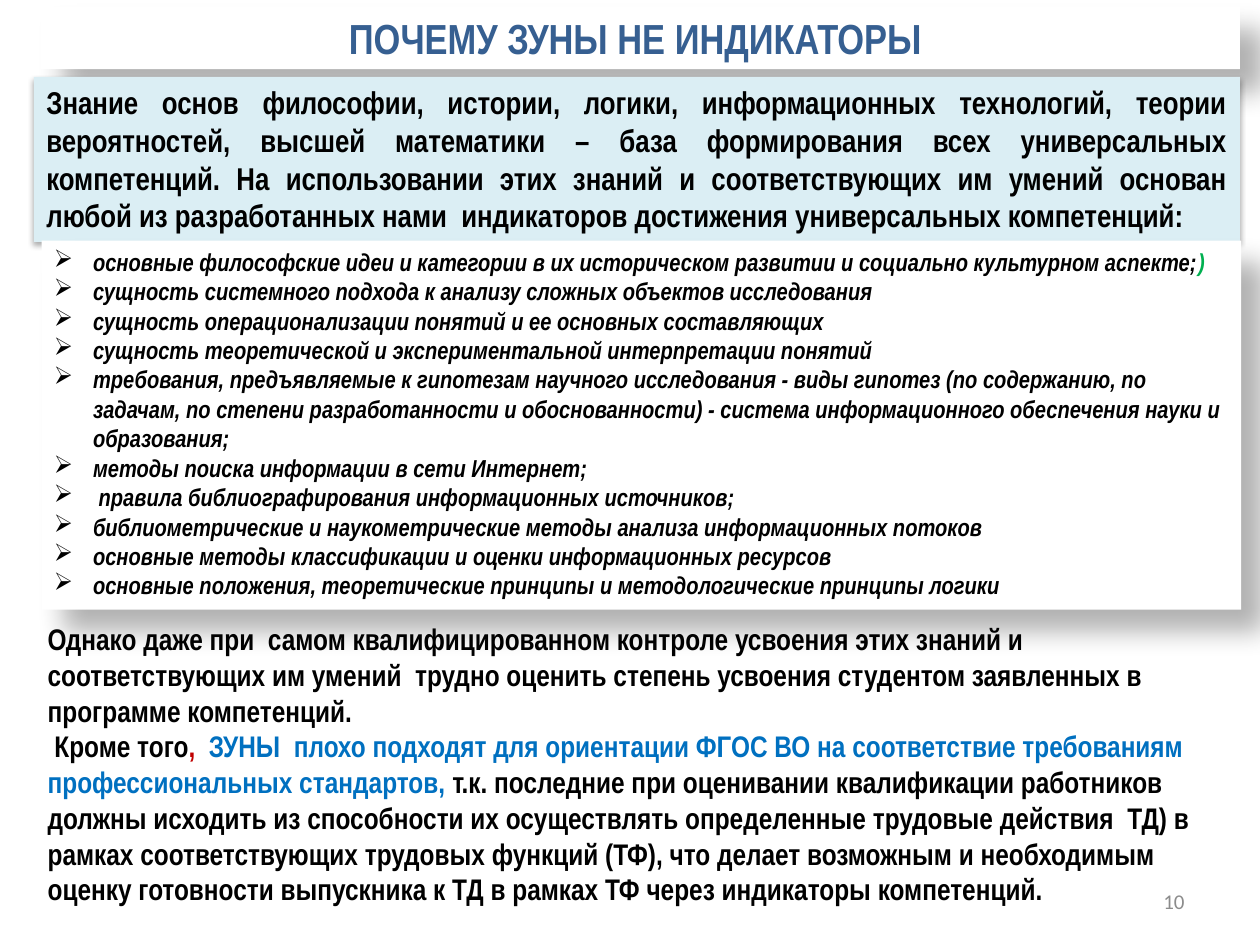
from lxml.etree import SubElement as Sub
from pptx import Presentation
from pptx.dml.color import RGBColor as RGB
from pptx.enum.shapes import MSO_SHAPE as Shape
from pptx.enum.text import MSO_ANCHOR as Anchor, MSO_AUTO_SIZE as Auto, PP_ALIGN as Align
from pptx.oxml.ns import qn
from pptx.util import Inches, Pt

COLORS = {
    "white": "FFFFFF", "black": "000000", "pale": "DBEEF4", "navy": "365F91",
    "green": "00B050", "red": "C00000", "blue": "0070C0", "gray": "8C8C8C",
}
DEEP = {"alpha": 30, "blur": 15, "dist": 18, "angle": 45}
SOFT = {"alpha": 32, "blur": 3.5, "dist": 2.2, "angle": 90}

INTRO = (
    "Знание основ философии, истории, логики, информационных технологий, теории вероятностей, "
    "высшей математики – база формирования всех универсальных компетенций. На использовании этих "
    "знаний и соответствующих им умений основан любой из разработанных нами  индикаторов "
    "достижения универсальных компетенций:"
)
TOPICS = [
    [("основные философские идеи и категории в их историческом развитии и социально культурном "
      "аспекте;", "black"), (")", "green")],
    "сущность системного подхода к анализу сложных объектов исследования",
    "сущность операционализации понятий и ее основных составляющих",
    "сущность теоретической и экспериментальной интерпретации понятий",
    "требования, предъявляемые к гипотезам научного исследования - виды гипотез (по содержанию, "
    "по задачам, по степени разработанности и обоснованности) - система информационного "
    "обеспечения науки и образования;",
    "методы поиска информации в сети Интернет;",
    " правила библиографирования информационных источников;",
    "библиометрические и наукометрические методы анализа информационных потоков",
    "основные методы классификации и оценки информационных ресурсов",
    "основные положения, теоретические принципы и методологические принципы логики",
]
CONCLUSION = [
    "Однако даже при  самом квалифицированном контроле усвоения этих знаний и соответствующих им "
    "умений  трудно оценить степень усвоения студентом заявленных в программе компетенций.",
    [(" Кроме того", "black"), (",  ", "red"),
     ("ЗУНЫ  плохо подходят для ориентации ФГОС ВО на соответствие требованиям профессиональных "
      "стандартов, ", "blue"),
     ("т.к. последние при оценивании квалификации работников должны исходить из способности их "
      "осуществлять определенные трудовые действия  ТД) в рамках соответствующих трудовых функций "
      "(ТФ), что делает возможным и необходимым оценку готовности выпускника к ТД в рамках ТФ "
      "через индикаторы компетенций.", "black")],
]


class Deck:
    def __init__(self, s):
        self.s = s
        self.font = {"name": "Arial Narrow", "bold": True}

    def panel(self, kind, box, fill, shadow):
        sp = self.s.shapes.add_shape(kind, *map(Inches, box))
        sp.fill.solid()
        sp.fill.fore_color.rgb = RGB.from_string(COLORS[fill])
        sp.line.fill.background()
        self.shadow(sp, **shadow)
        return sp

    def shadow(self, sp, alpha, blur, dist, angle):
        sp.shadow.inherit = False
        effects = sp._element.spPr.find(qn("a:effectLst"))
        outer = Sub(effects, qn("a:outerShdw"), blurRad=str(Pt(blur)), dist=str(Pt(dist)),
                    dir=str(angle * 60000), algn="ctr", rotWithShape="0")
        color = Sub(outer, qn("a:srgbClr"), val=COLORS["black"])
        Sub(color, qn("a:alpha"), val=str(alpha * 1000))

    def textbox(self, box):
        return self.s.shapes.add_textbox(*map(Inches, box))

    def text(self, sp, paragraphs, size, color="black", anchor=Anchor.TOP, grow=True,
             bullet=None, para=None, **font):
        tf = sp.text_frame
        tf.word_wrap = True
        tf.vertical_anchor = anchor
        if grow:
            tf.auto_size = Auto.SHAPE_TO_FIT_TEXT
        para = {"alignment": Align.LEFT, **(para or {})}
        font = {**self.font, "size": Pt(size), **font}
        for i, runs in enumerate(paragraphs):
            p = tf.add_paragraph() if i else tf.paragraphs[0]
            for key, value in para.items():
                setattr(p, key, value)
            if bullet:
                self.bullet(p, bullet)
            for words, tint in [(runs, color)] if isinstance(runs, str) else runs:
                r = p.add_run()
                r.text = words
                for key, value in font.items():
                    setattr(r.font, key, value)
                r.font.color.rgb = RGB.from_string(COLORS[tint])

    def bullet(self, p, char):
        pPr = p._p.get_or_add_pPr()
        pPr.set("marL", str(Inches(0.31)))
        pPr.set("indent", str(Inches(-0.31)))
        Sub(pPr, qn("a:buChar"), char=char)


def main():
    prs = Presentation()
    prs.slide_width, prs.slide_height = Inches(10), Inches(7.5)
    deck = Deck(prs.slides.add_slide(prs.slide_layouts[6]))

    number = deck.textbox((7.17, 6.95, 2.33, 0.4))
    deck.text(number, ["10"], 12, "gray", Anchor.MIDDLE, grow=False,
              para={"alignment": Align.RIGHT}, name="Calibri", bold=False)

    title = deck.panel(Shape.RECTANGLE, (0.32, 0.05, 9.52, 0.5), "white", DEEP)
    deck.text(title, ["ПОЧЕМУ ЗУНЫ НЕ ИНДИКАТОРЫ "], 24, "navy",
              para={"alignment": Align.CENTER, "space_before": Pt(24)})

    intro = deck.panel(Shape.RECTANGULAR_CALLOUT, (0.27, 0.61, 9.57, 1.31), "pale", SOFT)
    intro.adjustments[0], intro.adjustments[1] = -0.41, 0.85
    deck.text(intro, [INTRO], 18, para={"alignment": Align.JUSTIFY})

    topics = deck.panel(Shape.RECTANGLE, (0.33, 1.91, 9.52, 2.93), "white", DEEP)
    deck.text(topics, TOPICS, 14, bullet="➢", italic=True)

    conclusion = deck.textbox((0.28, 4.88, 9.56, 2.39))
    deck.text(conclusion, CONCLUSION, 17)

    prs.save("out.pptx")


if __name__ == "__main__":
    main()
